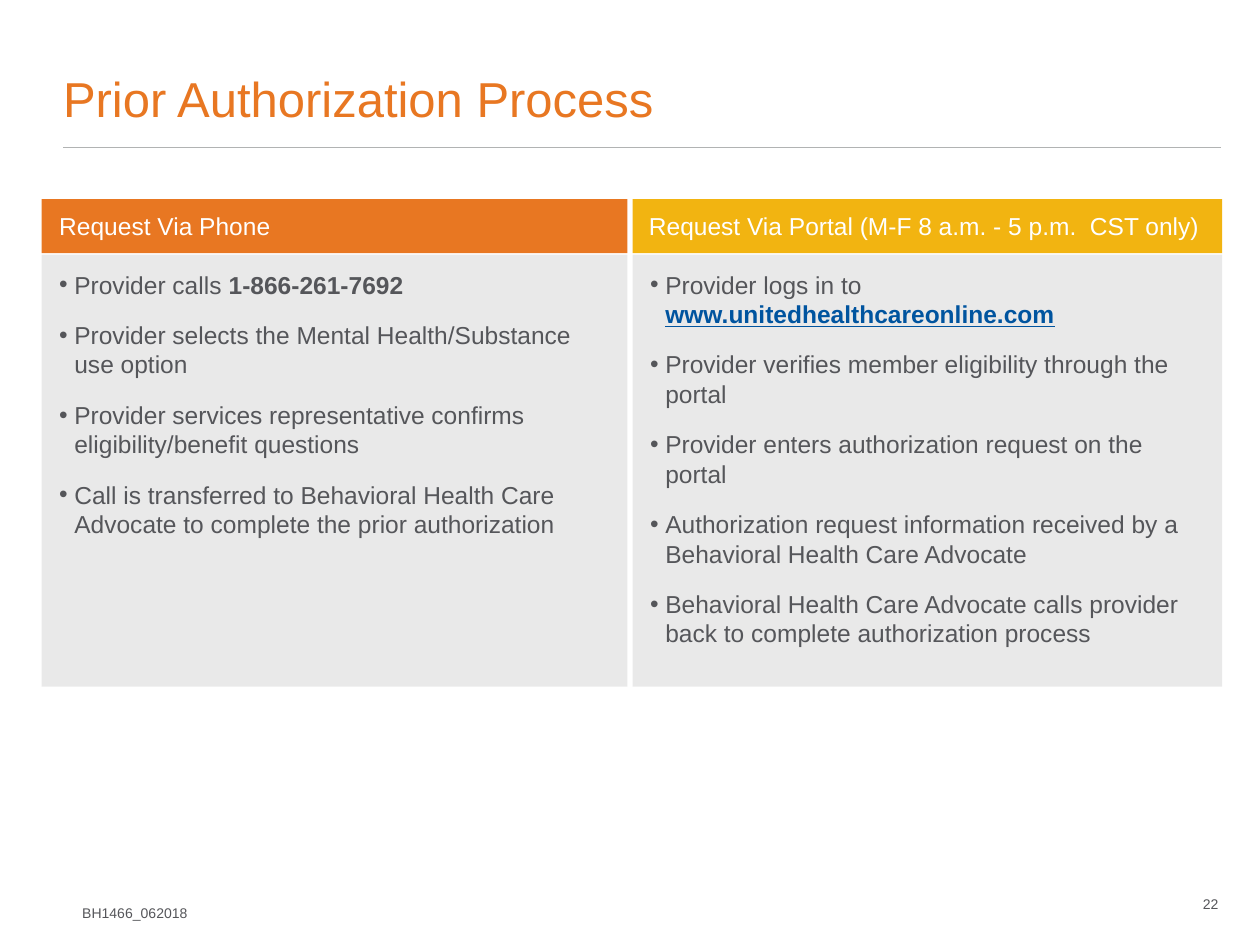
from lxml import etree
from pptx import Presentation
from pptx import util as u
from pptx.dml.color import RGBColor
from pptx.enum import shapes, text
from pptx.oxml import ns

ORANGE, GOLD, GREY, BLUE, WHITE = "E87722", "F2B411", "55565A", "00549F", "FFFFFF"
PANEL_TOP, HEADER_HEIGHT, LIST_HEIGHT = 1.58, 0.43, 3.43
LIST_TOP = PANEL_TOP + HEADER_HEIGHT + 0.01
PANEL_MARGINS = (0.14, 0.12, 0.14, 0.12)
INDENT = u.Inches(0.12)

PANELS = [
    {
        "header": "Request Via Phone",
        "color": ORANGE,
        "left": 0.33,
        "width": 4.65,
        "margins": PANEL_MARGINS,
        "steps": [
            [("Provider calls ", {}), ("1-866-261-7692", {"bold": True})],
            [("Provider selects the Mental Health/Substance use option", {})],
            [("Provider services representative confirms eligibility/benefit questions", {})],
            [("Call is transferred to Behavioral Health Care Advocate to complete the prior authorization", {})],
        ],
    },
    {
        "header": "Request Via Portal (M-F 8 a.m. - 5 p.m.  CST only)",
        "color": GOLD,
        "left": 5.02,
        "width": 4.68,
        "margins": (0.13, 0.12, 0.05, 0.12),
        "steps": [
            [("Provider logs in to ", {}),
             ("www.unitedhealthcareonline.com", {"bold": True, "underline": True, "color": BLUE})],
            [("Provider verifies member eligibility through the portal", {})],
            [("Provider enters authorization request on the portal", {})],
            [("Authorization request information received by a Behavioral Health Care Advocate", {})],
            [("Behavioral Health Care Advocate calls provider back to complete authorization process", {})],
        ],
    },
]


def rgb(value):
    return RGBColor.from_string(value)


def apply(target, values):
    for name, value in values.items():
        setattr(target, name, value)


class SlideBuilder:
    font = "Arial"

    def __init__(self, slide):
        self.slide = slide

    def place(self, shape, left, top, width, height):
        apply(shape, {"left": u.Inches(left), "top": u.Inches(top),
                      "width": u.Inches(width), "height": u.Inches(height)})

    def frame(self, shape, margins=(0, 0, 0, 0), anchor=text.MSO_ANCHOR.TOP):
        sides = ("margin_left", "margin_top", "margin_right", "margin_bottom")
        apply(shape.text_frame, dict(zip(sides, map(u.Inches, margins))))
        apply(shape.text_frame, {"word_wrap": True, "vertical_anchor": anchor,
                                 "auto_size": text.MSO_AUTO_SIZE.NONE})
        return shape.text_frame

    def run(self, paragraph, words, size, color, **style):
        run = paragraph.add_run()
        run.text = words
        apply(run.font, {"name": self.font, "size": u.Pt(size), **style})
        run.font.color.rgb = rgb(color)

    def title(self, words, *box):
        title = self.slide.shapes.title
        self.place(title, *box)
        paragraph = self.frame(title, anchor=text.MSO_ANCHOR.BOTTOM).paragraphs[0]
        paragraph.alignment = text.PP_ALIGN.LEFT
        self.run(paragraph, words, 28, ORANGE)

    def rule(self, left, right, y):
        rule = self.slide.shapes.add_connector(
            shapes.MSO_CONNECTOR.STRAIGHT,
            u.Inches(left), u.Inches(y), u.Inches(right), u.Inches(y))
        rule.line.color.rgb = rgb("B1B3B3")
        rule.line.width = u.Pt(1)
        etree.SubElement(rule._element.spPr, ns.qn("a:effectLst"))

    def header(self, words, color, margins, *box):
        header = self.slide.shapes.add_shape(
            shapes.MSO_SHAPE.RECTANGLE, *map(u.Inches, box))
        header.shadow.inherit = False
        header.fill.solid()
        header.fill.fore_color.rgb = rgb(color)
        header.line.fill.background()
        paragraph = self.frame(header, margins).paragraphs[0]
        apply(paragraph, {"alignment": text.PP_ALIGN.LEFT, "line_spacing": 0.9})
        self.run(paragraph, words, 14, WHITE)

    def step_list(self, body, steps, *box):
        self.place(body, *box)
        body.fill.solid()
        body.fill.fore_color.rgb = rgb(GREY)
        tint = body._element.spPr.find(".//" + ns.qn("a:srgbClr"))
        etree.SubElement(tint, ns.qn("a:alpha"), val="13000")
        frame = self.frame(body, PANEL_MARGINS)
        for index, step in enumerate(steps):
            paragraph = frame.add_paragraph() if index else frame.paragraphs[0]
            properties = paragraph._p.get_or_add_pPr()
            properties.set("marL", str(INDENT))
            properties.set("indent", str(-INDENT))
            etree.SubElement(properties, ns.qn("a:buChar"), char="•")
            apply(paragraph, {"space_before": u.Pt(0), "space_after": u.Pt(12)})
            for words, style in step:
                self.run(paragraph, words, **{"size": 14, "color": GREY, **style})

    def small_print(self, words, *box):
        label = self.slide.shapes.add_textbox(*map(u.Inches, box))
        paragraph = self.frame(label, anchor=text.MSO_ANCHOR.MIDDLE).paragraphs[0]
        paragraph.alignment = text.PP_ALIGN.RIGHT
        self.run(paragraph, words, 8, GREY)


def main():
    deck = Presentation()
    apply(deck, {"slide_width": u.Inches(10), "slide_height": u.Inches(7.5)})
    slide = deck.slides.add_slide(deck.slide_layouts.get_by_name("Two Content"))
    builder = SlideBuilder(slide)
    builder.small_print("BH1466_062018", 0.57, 7.18, 0.92, 0.13)
    builder.rule(0.5, 9.69, 1.17)
    builder.title("Prior Authorization Process", 0.5, 0.33, 9.18, 0.68)
    bodies = list(slide.placeholders)[1:]
    for panel, body in zip(PANELS, bodies):
        left, width = panel["left"], panel["width"]
        builder.header(panel["header"], panel["color"], panel["margins"],
                       left, PANEL_TOP, width, HEADER_HEIGHT)
        builder.step_list(body, panel["steps"], left, LIST_TOP, width, LIST_HEIGHT)
    builder.small_print("22", 9.25, 7.04, 0.42, 0.27)
    deck.save("out.pptx")


if __name__ == "__main__":
    main()
